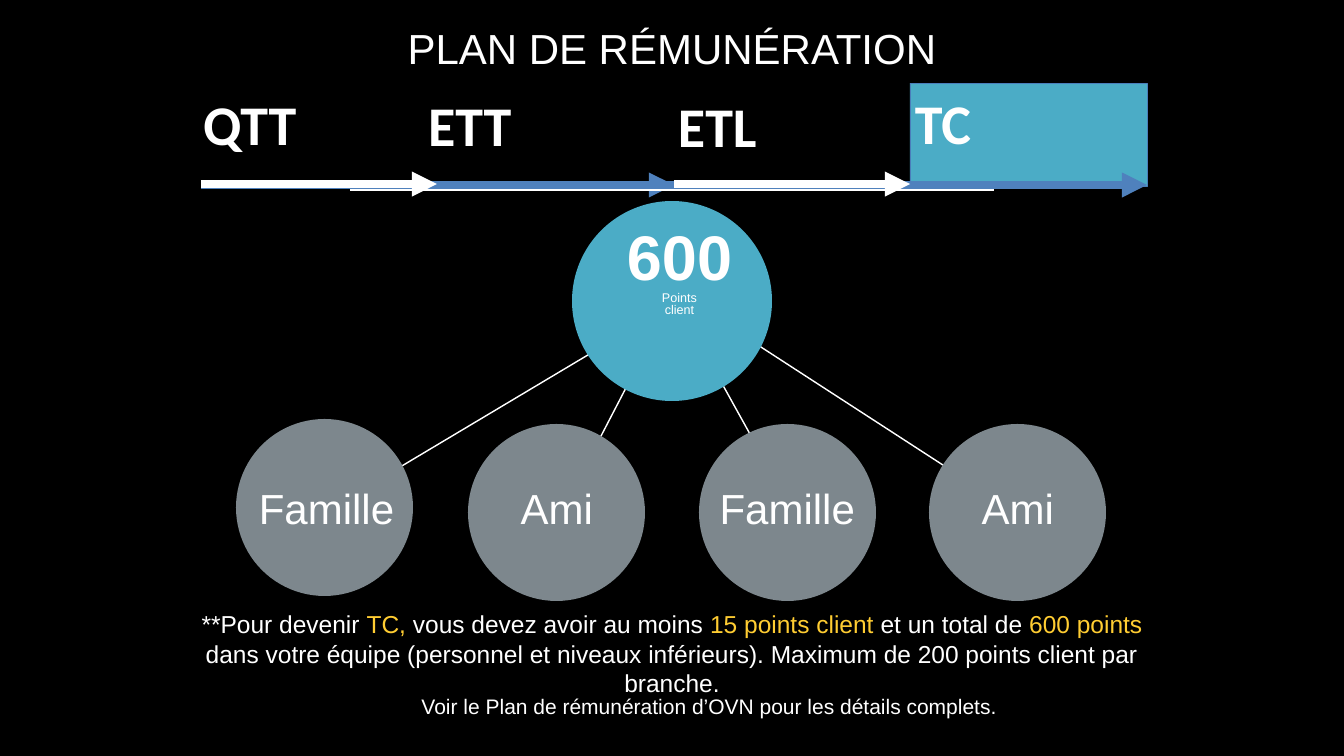
from lxml.etree import SubElement
from pptx import Presentation
from pptx.dml.color import RGBColor
from pptx.enum.shapes import MSO_CONNECTOR, MSO_SHAPE
from pptx.enum.text import MSO_ANCHOR, PP_ALIGN
from pptx.oxml.ns import qn
from pptx.util import Pt

PX = 914400 / 50.4


class Theme:
    black, white, gold = "000000", "FFFFFF", "FFCD32"
    teal, blue, edge, gray = "4BACC6", "4F81BD", "4A7EBB", "7D878D"
    sans, heading = "Arial", "Calibri"
    title, stage, total, unit = 60, 80, 90, 18
    member, rule, footer = 60, 35, 30


TITLE = "PLAN DE RÉMUNÉRATION"
# name, left, top, width
STAGES = [("QTT", 198, 84, 213), ("ETT", 423, 85, 250),
          ("ETL", 673, 86, 237), ("TC", 910, 83, 237)]
STAGE_EDGES = [201, 437, 674, 910, 1147]
# name, left and top of the circle
MEMBERS = [("Famille", 236, 419), ("Ami", 468, 424),
           ("Famille", 699, 424), ("Ami", 929, 424)]
SPOKES = [(791, 508, 674, 297), (1020, 515, 673, 290),
          (558, 519, 670, 303), (670, 306, 318, 516)]
RULE = [("**Pour devenir ", Theme.white), ("TC, ", Theme.gold),
        ("vous devez avoir au moins ", Theme.white),
        ("15 points client ", Theme.gold),
        ("et un total de ", Theme.white), ("600 points ", Theme.gold),
        ("dans votre équipe (personnel et niveaux inférieurs). "
         "Maximum de 200 points client par branche.", Theme.white)]
FOOTER = "Voir le Plan de rémunération d’OVN pour les détails complets."


def px(*lengths):
    return [round(length * PX) for length in lengths]


def color(value):
    return RGBColor.from_string(value)


def add_span(para, text, size, ink=Theme.white, font=Theme.sans, bold=False):
    span = para.add_run()
    span.text = text
    span.font.size = Pt(size)
    span.font.name = font
    span.font.bold = bold
    span.font.color.rgb = color(ink)


def add_box(page, place, inset, anchor, wrap=True):
    box = page.shapes.add_textbox(*px(*place))
    frame = box.text_frame
    frame.word_wrap = wrap
    frame.vertical_anchor = anchor
    frame.margin_left, frame.margin_top, frame.margin_right, frame.margin_bottom = px(*[inset] * 4)
    return frame


def add_solid(page, kind, place, fill, edge=None):
    shape = page.shapes.add_shape(kind, *px(*place))
    shape.shadow.inherit = False
    shape.fill.solid()
    shape.fill.fore_color.rgb = color(fill)
    if edge:
        shape.line.color.rgb = color(edge)
        shape.line.width = Pt(1)
    else:
        shape.line.fill.background()


def add_line(page, ends, ink, width, arrow=False):
    line = page.shapes.add_connector(MSO_CONNECTOR.STRAIGHT, *px(*ends))
    line.line.color.rgb = color(ink)
    line.line.width = Pt(width)
    if arrow:
        SubElement(line.line._get_or_add_ln(), qn("a:tailEnd"), type="triangle")
    SubElement(line._element.spPr, qn("a:effectLst"))


def add_title(page):
    title = page.shapes.title
    title.left, title.top, title.width, title.height = px(168, 19, 1008, 57)
    title.text_frame.vertical_anchor = MSO_ANCHOR.MIDDLE
    para = title.text_frame.paragraphs[0]
    para.alignment = PP_ALIGN.CENTER
    add_span(para, TITLE, Theme.title)


def add_stages(page):
    add_solid(page, MSO_SHAPE.RECTANGLE, (910, 83, 237, 103), Theme.teal, Theme.edge)
    for name, left, top, width in STAGES:
        frame = add_box(page, (left, top, width, 78), 5, MSO_ANCHOR.BOTTOM)
        add_span(frame.paragraphs[0], name, Theme.stage, font=Theme.heading, bold=True)
    first, second, third, fourth, last = STAGE_EDGES
    for start, end, y, ink in [(first, last, 185, Theme.blue), (second, third, 185, Theme.blue),
                               (first, second, 184, Theme.white), (third, fourth, 184, Theme.white)]:
        add_line(page, (start, y, end, y), ink, 12, arrow=True)
    add_line(page, (350, 190, 994, 190), Theme.white, 2)


def add_team(page):
    for ends in SPOKES:
        add_line(page, ends, Theme.white, 2)
    add_solid(page, MSO_SHAPE.OVAL, (572, 201, 200, 200), Theme.teal)
    frame = add_box(page, (615, 230, 129, 89), 2.5, MSO_ANCHOR.TOP, wrap=False)
    for index, (text, size) in enumerate([("600", Theme.total), ("Points", Theme.unit),
                                          ("client", Theme.unit)]):
        para = frame.add_paragraph() if index else frame.paragraphs[0]
        para.alignment = PP_ALIGN.CENTER
        para.line_spacing = 0.8
        add_span(para, text, size, bold=index == 0)
    for index, (name, left, top) in enumerate(MEMBERS):
        add_solid(page, MSO_SHAPE.OVAL, (left, top, 177, 177), Theme.gray)
        label_left = 213 + 230.4 * index
        frame = add_box(page, (label_left, 485, 227, 55), 4, MSO_ANCHOR.MIDDLE)
        para = frame.paragraphs[0]
        para.alignment = PP_ALIGN.CENTER
        para.line_spacing = 0.8
        add_span(para, name, Theme.member)


def add_notice(page):
    frame = add_box(page, (171, 607, 1002, 93), 4, MSO_ANCHOR.MIDDLE)
    para = frame.paragraphs[0]
    para.alignment = PP_ALIGN.CENTER
    for text, ink in RULE:
        add_span(para, text, Theme.rule, ink)
    frame = add_box(page, (419, 691, 592, 28), 2.5, MSO_ANCHOR.TOP, wrap=False)
    add_span(frame.paragraphs[0], FOOTER, Theme.footer)


def main():
    deck = Presentation()
    deck.slide_width, deck.slide_height = px(1344, 756)
    page = deck.slides.add_slide(deck.slide_layouts[5])
    page.background.fill.solid()
    page.background.fill.fore_color.rgb = color(Theme.black)
    add_title(page)
    add_stages(page)
    add_team(page)
    add_notice(page)
    deck.save("out.pptx")


if __name__ == "__main__":
    main()
